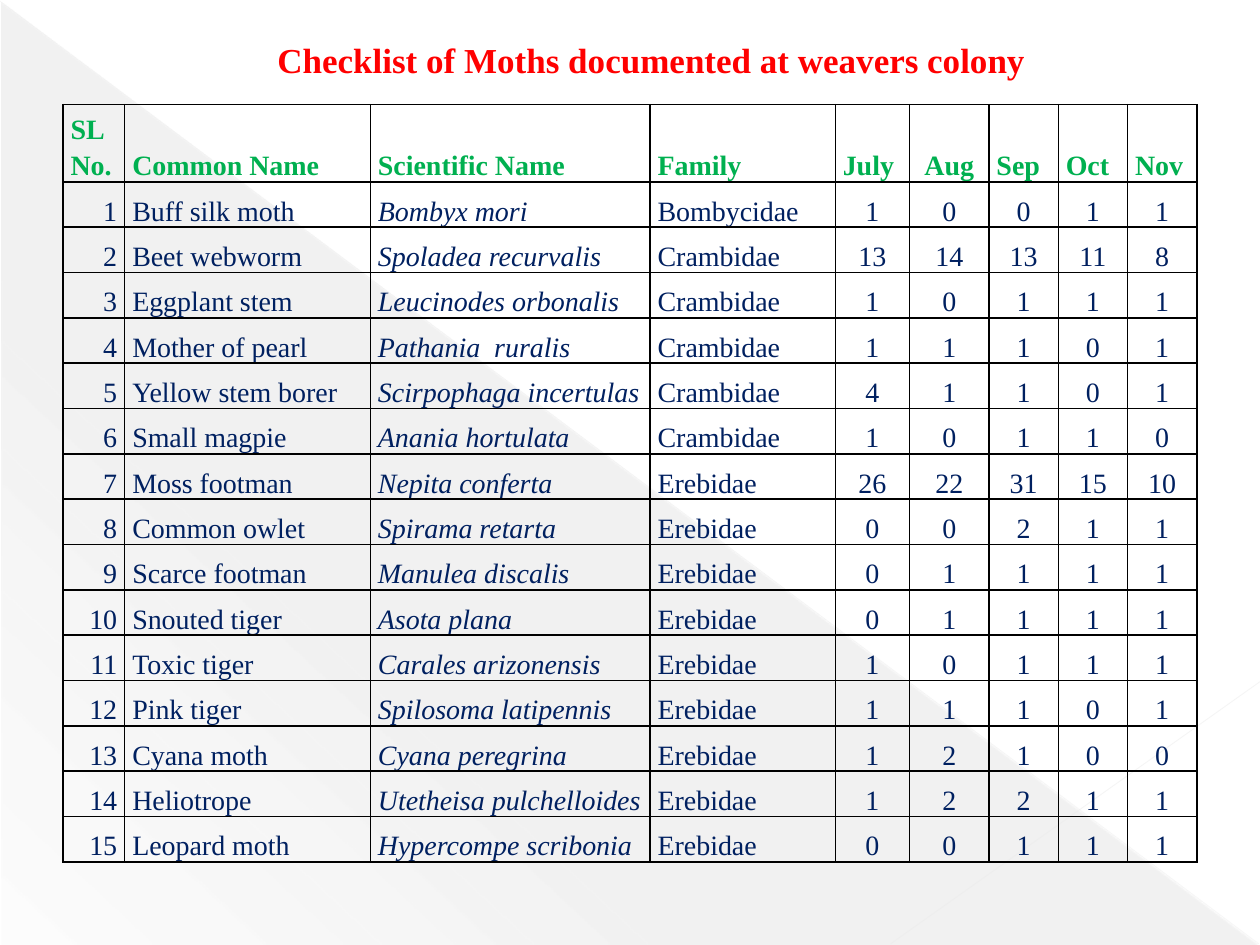
from lxml import etree
from pptx import Presentation
from pptx import util as u
from pptx.dml.color import RGBColor
from pptx.enum import shapes, text
from pptx.oxml import parse_xml
from pptx.oxml.ns import nsdecls, qn

RED = RGBColor(0xFF, 0x00, 0x00)
GREEN = RGBColor(0x00, 0xB0, 0x50)
NAVY = RGBColor(0x00, 0x20, 0x60)
BLACK = RGBColor(0x00, 0x00, 0x00)
GREY = RGBColor(0x66, 0x66, 0x66)
PALE_GREY = RGBColor(0xE8, 0xE8, 0xE8)
LIGHT_GREY = RGBColor(0xEA, 0xEA, 0xEA)

COLUMN_WIDTHS = [0.49, 1.95, 2.22, 1.47, 0.59, 0.63, 0.55, 0.55, 0.55]
HEADERS = ["SL\nNo.", "Common Name", "Scientific Name", "Family",
           "July", "Aug", "Sep", "Oct", "Nov"]
MOTHS = [
    ("Buff silk moth", "Bombyx mori", "Bombycidae", 1, 0, 0, 1, 1),
    ("Beet webworm", "Spoladea recurvalis", "Crambidae", 13, 14, 13, 11, 8),
    ("Eggplant stem", "Leucinodes orbonalis", "Crambidae", 1, 0, 1, 1, 1),
    ("Mother of pearl", "Pathania  ruralis", "Crambidae", 1, 1, 1, 0, 1),
    ("Yellow stem borer", "Scirpophaga incertulas", "Crambidae", 4, 1, 1, 0, 1),
    ("Small magpie", "Anania hortulata", "Crambidae", 1, 0, 1, 1, 0),
    ("Moss footman", "Nepita conferta", "Erebidae", 26, 22, 31, 15, 10),
    ("Common owlet", "Spirama retarta", "Erebidae", 0, 0, 2, 1, 1),
    ("Scarce footman", "Manulea discalis", "Erebidae", 0, 1, 1, 1, 1),
    ("Snouted tiger", "Asota plana", "Erebidae", 0, 1, 1, 1, 1),
    ("Toxic tiger", "Carales arizonensis", "Erebidae", 1, 0, 1, 1, 1),
    ("Pink tiger", "Spilosoma latipennis", "Erebidae", 1, 1, 1, 0, 1),
    ("Cyana moth", "Cyana peregrina", "Erebidae", 1, 2, 1, 0, 0),
    ("Heliotrope", "Utetheisa pulchelloides", "Erebidae", 1, 2, 2, 1, 1),
    ("Leopard moth", "Hypercompe scribonia", "Erebidae", 0, 0, 1, 1, 1),
]


class ChecklistSlide:
    """Holds the text style and the current slide, and draws its elements."""

    font_name = "Times New Roman"
    title_size = u.Pt(20)
    table_size = u.Pt(16)
    side_margin = u.Inches(0.06)

    def __init__(self, presentation):
        self.slide = presentation.slides.add_slide(presentation.slide_layouts[5])

    def format_text(self, paragraph, size, color, bold=False, italic=False):
        for run in paragraph.runs:
            font = run.font
            font.name, font.size = self.font_name, size
            font.bold, font.italic = bold, italic
            font.color.rgb = color

    def add_triangle(self, left, top, width, height, stops, angle):
        triangle = self.slide.shapes.add_shape(
            shapes.MSO_SHAPE.RIGHT_TRIANGLE, u.Inches(left), u.Inches(top),
            u.Inches(width), u.Inches(height))
        triangle.shadow.inherit = False
        triangle.line.fill.background()
        triangle.fill.background()
        stop_xml = "".join(
            f'<a:gs pos="{position * 1000}"><a:srgbClr val="{GREY}">'
            f'<a:alpha val="{opacity * 1000}"/></a:srgbClr></a:gs>'
            for position, opacity in stops)
        gradient = parse_xml(
            f'<a:gradFill {nsdecls("a")} rotWithShape="1"><a:gsLst>{stop_xml}</a:gsLst>'
            f'<a:lin ang="{angle * 60000}" scaled="0"/></a:gradFill>')
        no_fill = triangle.element.spPr.find(qn("a:noFill"))
        no_fill.getparent().replace(no_fill, gradient)

    def add_line(self, start, end, color, width, opacity):
        points = [u.Inches(value) for value in (*start, *end)]
        line = self.slide.shapes.add_connector(shapes.MSO_CONNECTOR.STRAIGHT, *points)
        line.line.color.rgb = color
        line.line.width = u.Pt(width)
        properties = line.element.spPr
        color_element = properties.find(".//" + qn("a:srgbClr"))
        etree.SubElement(color_element, qn("a:alpha"), val=str(opacity * 1000))
        etree.SubElement(properties, qn("a:effectLst"))

    def add_title(self, wording, left, top, width, height):
        title = self.slide.shapes.title
        title.element.getparent().append(title.element)
        title.left, title.top = u.Inches(left), u.Inches(top)
        title.width, title.height = u.Inches(width), u.Inches(height)
        frame = title.text_frame
        frame.text = wording
        frame.word_wrap = False
        frame.auto_size = text.MSO_AUTO_SIZE.SHAPE_TO_FIT_TEXT
        frame.vertical_anchor = text.MSO_ANCHOR.MIDDLE
        paragraph = frame.paragraphs[0]
        paragraph.alignment = text.PP_ALIGN.CENTER
        self.format_text(paragraph, self.title_size, RED, bold=True)

    def add_borders(self, cell):
        properties = cell._tc.get_or_add_tcPr()
        for position, side in enumerate(("lnL", "lnR", "lnT", "lnB")):
            properties.insert(position, parse_xml(
                f'<a:{side} {nsdecls("a")} w="{u.Pt(1)}"><a:solidFill>'
                f'<a:srgbClr val="{BLACK}"/></a:solidFill></a:{side}>'))

    def fill_cell(self, cell, wording, alignment, color, bold=False, italic=False):
        cell.fill.background()
        cell.vertical_anchor = text.MSO_ANCHOR.BOTTOM
        cell.margin_left = cell.margin_right = self.side_margin
        cell.margin_top = cell.margin_bottom = 0
        cell.text_frame.text = str(wording)
        for paragraph in cell.text_frame.paragraphs:
            paragraph.alignment = alignment
            paragraph.line_spacing = 1.15
            self.format_text(paragraph, self.table_size, color, bold, italic)
        self.add_borders(cell)

    def add_checklist(self, left, top, header_height, row_height):
        height = header_height + row_height * len(MOTHS)
        table = self.slide.shapes.add_table(
            len(MOTHS) + 1, len(HEADERS), u.Inches(left), u.Inches(top),
            u.Inches(sum(COLUMN_WIDTHS)), u.Inches(height)).table
        table.first_row = table.horz_banding = False
        for column, width in zip(table.columns, COLUMN_WIDTHS):
            column.width = u.Inches(width)
        for row in table.rows:
            row.height = u.Inches(row_height)
        table.rows[0].height = u.Inches(header_height)

        align = text.PP_ALIGN
        for column, header in enumerate(HEADERS):
            alignment = align.CENTER if header == "Aug" else align.LEFT
            self.fill_cell(table.cell(0, column), header, alignment, GREEN, bold=True)
        alignments = [align.RIGHT] + [align.LEFT] * 3 + [align.CENTER] * 5
        for number, moth in enumerate(MOTHS, start=1):
            for column, value in enumerate((number, *moth)):
                self.fill_cell(table.cell(number, column), value, alignments[column],
                               NAVY, italic=HEADERS[column] == "Scientific Name")


def main():
    presentation = Presentation()
    presentation.slide_width, presentation.slide_height = u.Inches(10), u.Inches(7.5)
    checklist = ChecklistSlide(presentation)
    checklist.add_triangle(0.01, 0.02, 9.98, 7.48, [(0, 10), (70, 8), (100, 1)], 133)
    checklist.add_line((0, 0.01), (9.99, 7.49), PALE_GREY, 0.39, 35)
    checklist.add_line((10, 5.41), (7.07, 7.49), LIGHT_GREY, 0.47, 45)
    checklist.add_title("Checklist of Moths documented at weavers colony",
                        2.08, 0.25, 6.18, 0.44)
    checklist.add_checklist(0.5, 0.83, 0.5, 0.36)
    presentation.save("out.pptx")


if __name__ == "__main__":
    main()
